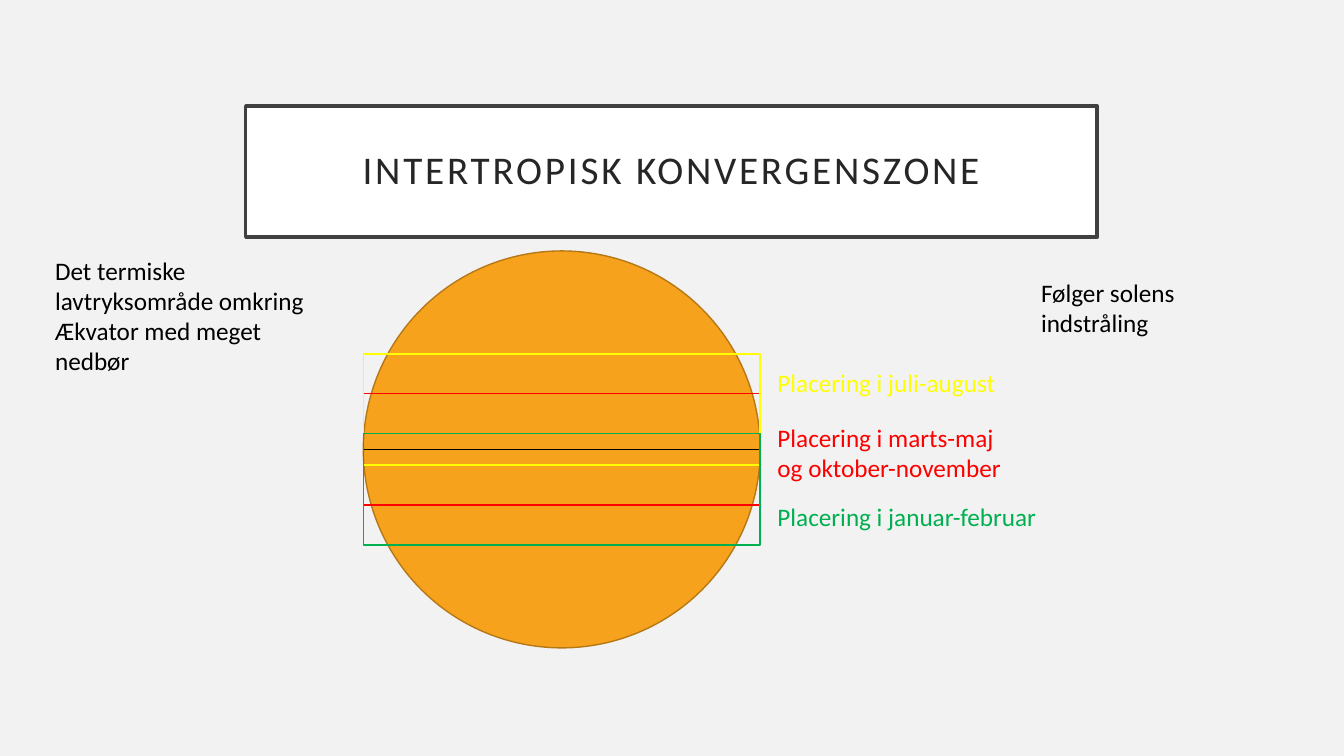
"""Build the slide on the intertropical convergence zone."""
from dataclasses import dataclass

from lxml import etree
from pptx import Presentation
from pptx.dml.color import RGBColor
from pptx.enum.shapes import MSO_CONNECTOR, MSO_SHAPE
from pptx.enum.text import MSO_ANCHOR, MSO_AUTO_SIZE, PP_ALIGN
from pptx.oxml.ns import qn
from pptx.shapes.autoshape import Shape
from pptx.slide import Slide
from pptx.text.text import _Paragraph
from pptx.util import Emu, Pt

RECT, OVAL = MSO_SHAPE.RECTANGLE, MSO_SHAPE.OVAL
STRAIGHT = MSO_CONNECTOR.STRAIGHT
MIDDLE, CENTER = MSO_ANCHOR.MIDDLE, PP_ALIGN.CENTER
NO_FIT, GROW = MSO_AUTO_SIZE.NONE, MSO_AUTO_SIZE.SHAPE_TO_FIT_TEXT

BACKGROUND = RGBColor(0xF2, 0xF2, 0xF2)
WHITE = RGBColor(0xFF, 0xFF, 0xFF)
BLACK = RGBColor(0x00, 0x00, 0x00)
FRAME = RGBColor(0x40, 0x40, 0x40)
TITLE_TEXT = RGBColor(0x26, 0x26, 0x26)
ORANGE = RGBColor(0xF6, 0xA2, 0x1D)
BROWN = RGBColor(0xB6, 0x78, 0x15)
RED = RGBColor(0xFF, 0x00, 0x00)
YELLOW = RGBColor(0xFF, 0xFF, 0x00)
GREEN = RGBColor(0x00, 0xB0, 0x50)

FONT = "Calibri"
TITLE_ONLY = 5
PX = 9525
GLOBE_X, GLOBE_Y, GLOBE_D = 346, 239, 378
EQUATOR_Y = GLOBE_Y + GLOBE_D // 2
BAND_H, BAND_SHIFT = 106, 38
LABEL_X = 731


@dataclass(frozen=True)
class Band:
    """A position of the zone, in steps south of the equator."""
    step: int
    color: RGBColor


@dataclass(frozen=True)
class Label:
    """A text with its place in px."""
    text: str
    x: int
    y: int
    w: int
    h: int
    color: RGBColor = BLACK


BANDS = [Band(0, RED), Band(-1, YELLOW), Band(1, GREEN)]
LABELS = [
    Label("Det termiske lavtryksområde omkring Ækvator med meget nedbør",
          43, 238, 265, 126),
    Label("Placering i juli-august", LABEL_X, 345, 242, 38, YELLOW),
    Label("Placering i marts-maj og oktober-november",
          LABEL_X, 397, 242, 68, RED),
    Label("Placering i januar-februar", LABEL_X, 473, 295, 38, GREEN),
    Label("Følger solens indstråling", 982, 259, 211, 68),
]


def px(n: int) -> Emu:
    """Turn px into EMU."""
    return Emu(n * PX)


def set_font(p: _Paragraph, size: int, color: RGBColor) -> None:
    """Format the font of a paragraph."""
    p.font.name = FONT
    p.font.size = Pt(size)
    p.font.color.rgb = color


def set_line(shape: Shape, color: RGBColor, width: float) -> None:
    """Format the outline of a shape."""
    shape.line.color.rgb = color
    shape.line.width = Pt(width)


def add_title(s: Slide, text: str) -> None:
    """Fill, move and frame the title placeholder."""
    sp = s.shapes.title
    sp.left, sp.top, sp.width, sp.height = px(234), px(101), px(811), px(125)
    sp.fill.solid()
    sp.fill.fore_color.rgb = WHITE
    set_line(sp, FRAME, 2.5)
    tf = sp.text_frame
    tf.word_wrap = True
    tf.auto_size = NO_FIT
    tf.vertical_anchor = MIDDLE
    tf.margin_left = tf.margin_right = px(19)
    tf.margin_top = tf.margin_bottom = px(19)
    p = tf.paragraphs[0]
    p.alignment = CENTER
    p.line_spacing = 0.9
    set_font(p, 28, TITLE_TEXT)
    r = p.add_run()
    r.text = text
    r._r.get_or_add_rPr().set("spc", "200")


def add_globe(s: Slide) -> None:
    """Draw the globe with its equator."""
    sp = s.shapes.add_shape(OVAL, px(GLOBE_X), px(GLOBE_Y),
                            px(GLOBE_D), px(GLOBE_D))
    sp.shadow.inherit = False
    sp.fill.solid()
    sp.fill.fore_color.rgb = ORANGE
    set_line(sp, BROWN, 1)
    equator = s.shapes.add_connector(STRAIGHT, px(GLOBE_X), px(EQUATOR_Y),
                                     px(GLOBE_X + GLOBE_D), px(EQUATOR_Y))
    set_line(equator, BLACK, 0.5)
    etree.SubElement(equator._element.spPr, qn("a:effectLst"))


def add_band(s: Slide, band: Band) -> None:
    """Outline one position of the zone."""
    top = EQUATOR_Y - BAND_H // 2 + band.step * BAND_SHIFT
    sp = s.shapes.add_shape(RECT, px(GLOBE_X), px(top),
                            px(GLOBE_D), px(BAND_H))
    sp.shadow.inherit = False
    sp.fill.background()
    set_line(sp, band.color, 1)


def add_label(s: Slide, label: Label) -> None:
    """Add one text box."""
    sp = s.shapes.add_textbox(px(label.x), px(label.y),
                              px(label.w), px(label.h))
    tf = sp.text_frame
    tf.word_wrap = True
    tf.auto_size = GROW
    p = tf.paragraphs[0]
    p.text = label.text
    set_font(p, 18, label.color)


def main() -> None:
    """Build and save the presentation."""
    prs = Presentation()
    prs.slide_width, prs.slide_height = px(1280), px(720)
    s = prs.slides.add_slide(prs.slide_layouts[TITLE_ONLY])
    s.background.fill.solid()
    s.background.fill.fore_color.rgb = BACKGROUND
    add_title(s, "INTERTROPISK KONVERGENSZONE")
    add_globe(s)
    for band in BANDS:
        add_band(s, band)
    for label in LABELS:
        add_label(s, label)
    prs.save("out.pptx")


if __name__ == "__main__":
    main()
